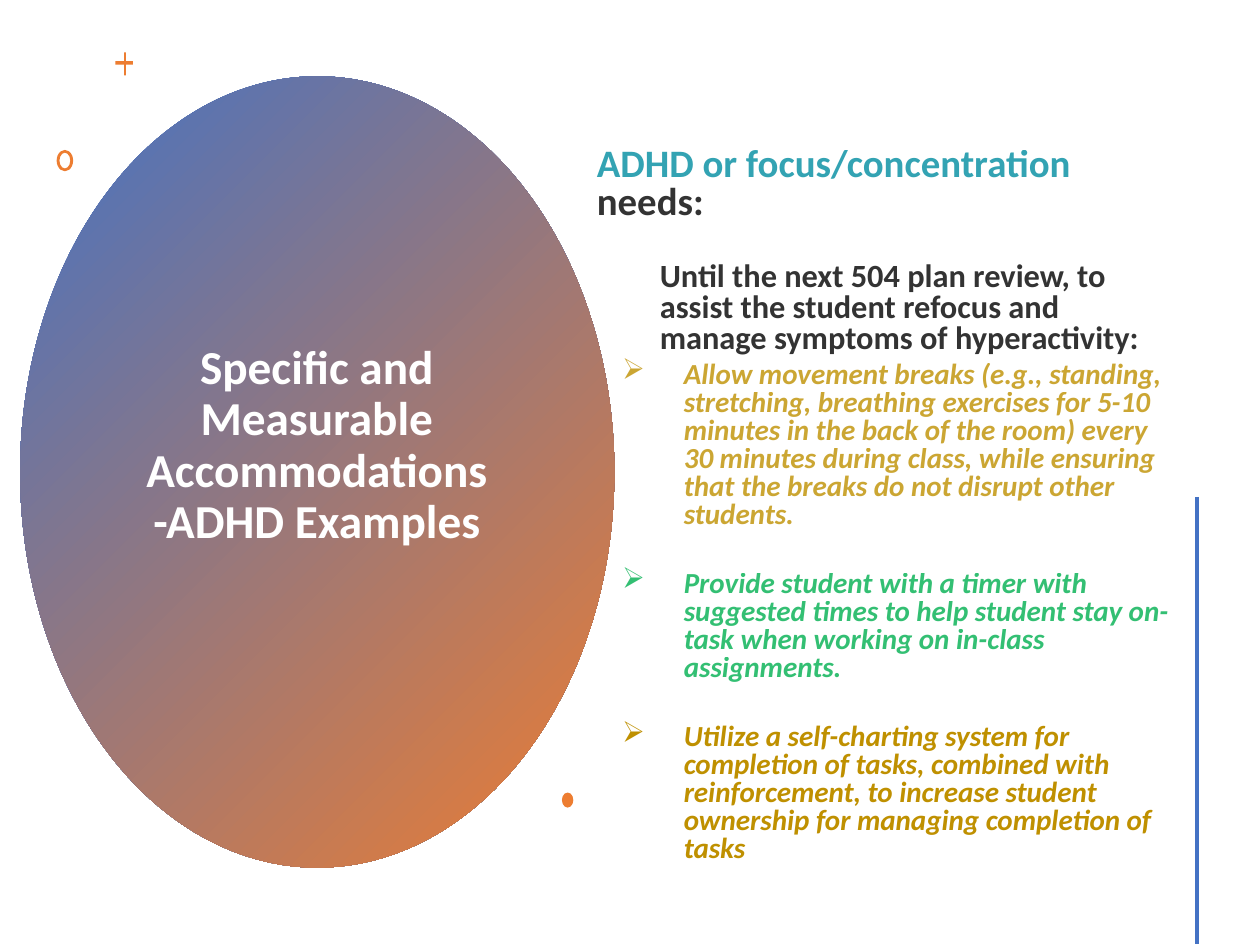
"""Build the ADHD accommodations slide."""
from lxml import etree
from pptx import Presentation
from pptx.dml.color import RGBColor
from pptx.enum.shapes import MSO_CONNECTOR, MSO_SHAPE
from pptx.enum.text import MSO_ANCHOR, PP_ALIGN
from pptx.oxml.ns import qn
from pptx.util import Pt

OVAL, DONUT, STRAIGHT = MSO_SHAPE.OVAL, MSO_SHAPE.DONUT, MSO_CONNECTOR.STRAIGHT
TOP, MIDDLE = MSO_ANCHOR.TOP, MSO_ANCHOR.MIDDLE
LEFT, CENTER = PP_ALIGN.LEFT, PP_ALIGN.CENTER

FONT = "Calibri"
COLORS = {"white": "FFFFFF", "black": "000000", "blue": "4472C4", "orange": "ED7D31",
          "teal": "008CA0", "gold": "BF9000", "green": "00B050"}

TITLE = "Specific and Measurable Accommodations-ADHD Examples"
HEADING = [("ADHD or focus/concentration ", "teal", 80), ("needs:", "black", 80)]
INTRO = [("Until the next 504 plan review, to assist the student refocus and manage "
          "symptoms of hyperactivity:", "black", 80)]
ACCOMMODATIONS = [
    ("Allow movement breaks (e.g., standing, stretching, breathing exercises for 5-10 "
     "minutes in the back of the room) every 30 minutes during class, while ensuring "
     "that the breaks do not disrupt other students.", "gold", 80),
    ("Provide student with a timer with suggested times to help student stay on-task "
     "when working on in-class assignments.", "green", 80),
    ("Utilize a self-charting system for completion of tasks, combined with "
     "reinforcement, to increase student ownership for managing completion of tasks",
     "gold", 100),
]
PLUS_X = (66.2, 70.6, 72, 76.3)
PLUS_Y = (29.5, 35.3, 37.4, 43.2)


def color(name):
    return RGBColor.from_string(COLORS[name])


def add_mark(slide, kind, left, top, width, height):
    shape = slide.shapes.add_shape(kind, Pt(left), Pt(top), Pt(width), Pt(height))
    paint(shape)
    return shape


def paint(shape):
    shape.shadow.inherit = False
    shape.fill.solid()
    shape.fill.fore_color.rgb = color("orange")
    shape.line.fill.background()


def add_plus(slide):
    x0, x1, x2, x3 = PLUS_X
    y0, y1, y2, y3 = PLUS_Y
    points = [(x1, y0), (x2, y0), (x2, y1), (x3, y1), (x3, y2), (x2, y2),
              (x2, y3), (x1, y3), (x1, y2), (x0, y2), (x0, y1), (x1, y1)]
    builder = slide.shapes.build_freeform(*points[0], scale=Pt(1))
    builder.add_line_segments(points[1:], close=True)
    paint(builder.convert_to_shape())


def add_text_frame(slide, left, top, width, height, anchor):
    box = slide.shapes.add_textbox(Pt(left), Pt(top), Pt(width), Pt(height))
    frame = box.text_frame
    frame.word_wrap = True
    frame.vertical_anchor = anchor
    return frame


def write(paragraph, runs, size, before=0, spacing=0.8, align=LEFT, indent=0, bullet=False):
    properties = paragraph._p.get_or_add_pPr()
    properties.set("marL", str(Pt(indent)))
    properties.set("indent", str(Pt(-35.3 if bullet else 0)))
    paragraph.alignment = align
    paragraph.line_spacing = spacing
    paragraph.space_before = Pt(before)
    if bullet:
        etree.SubElement(properties, qn("a:buChar"), char="➢")
        tabs = etree.SubElement(properties, qn("a:tabLst"))
        etree.SubElement(tabs, qn("a:tab"), pos=str(Pt(43.9)), algn="l")
    for text, name, opacity in runs:
        run = paragraph.add_run()
        run.text = text
        font = run.font
        font.name, font.size, font.bold, font.italic = FONT, Pt(size), True, bullet
        font.color.rgb = color(name)
        if opacity < 100:
            fill = run._r.rPr.find(qn("a:solidFill"))
            etree.SubElement(fill[0], qn("a:alpha"), val=str(opacity * 1000))


def main():
    presentation = Presentation()
    presentation.slide_width, presentation.slide_height = Pt(720), Pt(540)
    slide = presentation.slides.add_slide(presentation.slide_layouts[6])

    ellipse = add_mark(slide, OVAL, 11.5, 43.6, 339.6, 452.2)
    ellipse.fill.gradient()
    ellipse.fill.gradient_angle = 315
    for stop, name in zip(ellipse.fill.gradient_stops, ("blue", "orange")):
        stop.color.rgb = color(name)

    title = add_text_frame(slide, 73.4, 101.5, 215.3, 336.2, MIDDLE)
    title.margin_bottom = Pt(32.8)
    write(title.paragraphs[0], [(TITLE, "white", 100)], 27, spacing=0.9, align=CENTER)

    add_plus(slide)
    ring = add_mark(slide, DONUT, 32.4, 85.7, 9.4, 12.2)
    ring.adjustments[0] = 0.17

    body = add_text_frame(slide, 334, 29.5, 342.7, 498.2, TOP)
    body.margin_top = Pt(55)
    write(body.paragraphs[0], HEADING, 22.2)
    write(body.add_paragraph(), INTRO, 18.5, before=22.9, indent=36)
    for index, item in enumerate(ACCOMMODATIONS):
        write(body.add_paragraph(), [item], 16.6, before=23.8 if index else 3.8,
              indent=49.7, bullet=True)

    add_mark(slide, OVAL, 321.1, 452.9, 6.5, 8.6)

    rule = slide.shapes.add_connector(STRAIGHT, Pt(684), Pt(284), Pt(684), Pt(539.5))
    rule.line.color.rgb = color("blue")
    rule.line.width = Pt(2)
    etree.SubElement(rule._element.spPr, qn("a:effectLst"))

    presentation.save("out.pptx")


if __name__ == "__main__":
    main()
